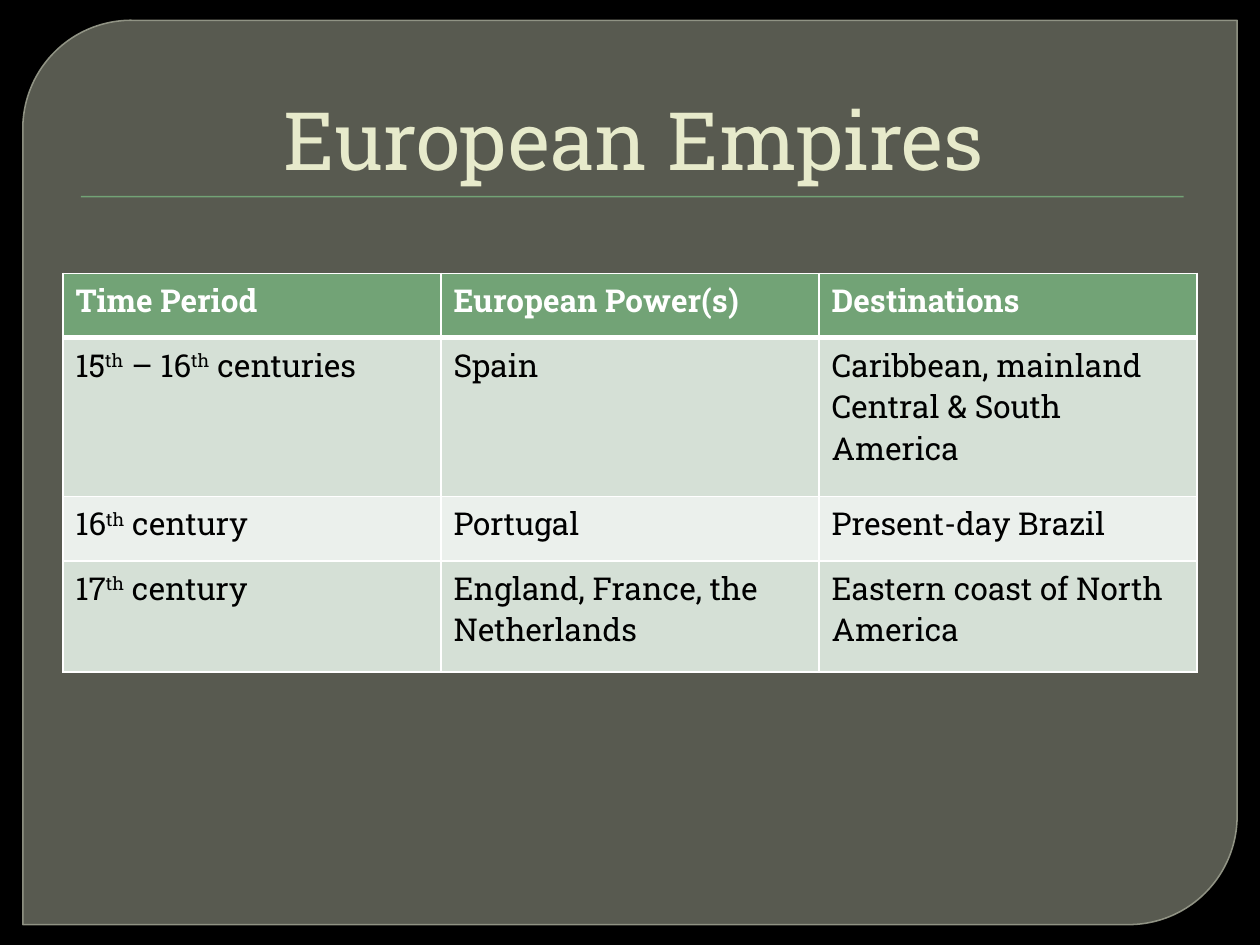
from lxml import etree
from pptx import Presentation
from pptx.dml.color import RGBColor
from pptx.enum import shapes, text
from pptx.oxml.ns import qn
from pptx.util import Cm, Pt

TITLE = "European Empires"
SUPERSCRIPT = "th"
ROWS = [
    (["Time Period", "European Power(s)", "Destinations"], 1.3),
    ([["15", SUPERSCRIPT, " – 16", SUPERSCRIPT, " centuries"], "Spain",
      "Caribbean, mainland Central & South America"], 3.2),
    ([["16", SUPERSCRIPT, " century"], "Portugal", "Present-day Brazil"], 1.3),
    ([["17", SUPERSCRIPT, " century"], "England, France, the Netherlands",
      "Eastern coast of North America"], 2.24),
]
THEME = {
    "font": "Roboto Slab", "title_size": 46, "table_size": 18,
    "background": "000000", "panel": "888B7B", "panel_line": "9DA090",
    "title": "E7EACB", "accent": "72A376", "bands": ["D5E0D6", "EBF0EC"],
    "header_text": "FFFFFF", "body_text": "000000", "border": "FFFFFF",
}
COLUMN_WIDTH = 7.62


def color(name):
    return RGBColor.from_string(THEME[name])


def set_font(font, size, color_name, bold=False):
    font.name = THEME["font"]
    font.size = Pt(THEME[size])
    font.color.rgb = color(color_name)
    font.bold = bold


def set_opacity(fill_owner, percent):
    for rgb in fill_owner.iter(qn("a:srgbClr")):
        etree.SubElement(rgb, qn("a:alpha"), val=str(percent * 1000))


def add_block(slide, kind, left, top, width, height, fill):
    shape = slide.shapes.add_shape(kind, Cm(left), Cm(top), Cm(width), Cm(height))
    shape.shadow.inherit = False
    shape.fill.solid()
    shape.fill.fore_color.rgb = color(fill)
    shape.line.fill.background()
    return shape


def add_panel(slide):
    panel = add_block(slide, shapes.MSO_SHAPE.ROUND_2_DIAG_RECTANGLE,
                      0.46, 0.41, 24.48, 18.23, "panel")
    panel.adjustments[0] = 0.12
    set_opacity(panel.element.spPr, 65)
    panel.line.color.rgb = color("panel_line")
    panel.line.width = Pt(0.87)
    set_opacity(panel.element.spPr.find(qn("a:ln")), 88)


def add_title(slide):
    title = slide.shapes.title
    title.left, title.top, title.width, title.height = Cm(1.27), Cm(0.71), Cm(22.86), Cm(3.18)
    frame = title.text_frame
    frame.text = TITLE
    frame.vertical_anchor = text.MSO_ANCHOR.BOTTOM
    frame.margin_left = Cm(0.41)
    paragraph = frame.paragraphs[0]
    paragraph.alignment = text.PP_ALIGN.CENTER
    set_font(paragraph.font, "title_size", "title")
    title.element.getparent().append(title.element)


def set_borders(cell, widths):
    properties = cell._tc.get_or_add_tcPr()
    for side, width in widths.items():
        line = etree.SubElement(properties, qn(f"a:ln{side}"), w=str(Pt(width)))
        fill = etree.SubElement(line, qn("a:solidFill"))
        etree.SubElement(fill, qn("a:srgbClr"), val=THEME["border"])


def fill_cell(cell, content, row):
    header = row == 0
    set_borders(cell, {"L": 1, "R": 1, "T": 3 if row == 1 else 1, "B": 3 if header else 1})
    cell.fill.solid()
    cell.fill.fore_color.rgb = (color("accent") if header
                                else RGBColor.from_string(THEME["bands"][(row - 1) % 2]))
    paragraph = cell.text_frame.paragraphs[0]
    set_font(paragraph.font, "table_size", "header_text" if header else "body_text", header)
    for part in [content] if isinstance(content, str) else content:
        run = paragraph.add_run()
        run.text = part
        set_font(run.font, "table_size", "header_text" if header else "body_text", header)
        if part == SUPERSCRIPT:
            run._r.get_or_add_rPr().set("baseline", "30000")


def add_empires_table(slide):
    columns = len(ROWS[0][0])
    height = sum(row_height for _, row_height in ROWS)
    table = slide.shapes.add_table(len(ROWS), columns, Cm(1.27), Cm(5.51),
                                   Cm(COLUMN_WIDTH * columns), Cm(height)).table
    for row, (contents, row_height) in enumerate(ROWS):
        table.rows[row].height = Cm(row_height)
        for column, content in enumerate(contents):
            fill_cell(table.cell(row, column), content, row)


def main():
    presentation = Presentation()
    presentation.slide_width, presentation.slide_height = Cm(25.4), Cm(19.05)
    slide = presentation.slides.add_slide(presentation.slide_layouts[5])
    slide.background.fill.solid()
    slide.background.fill.fore_color.rgb = color("background")
    add_panel(slide)
    add_block(slide, shapes.MSO_SHAPE.RECTANGLE, 1.63, 3.95, 22.23, 0.03, "accent")
    add_title(slide)
    add_empires_table(slide)
    presentation.save("out.pptx")


if __name__ == "__main__":
    main()
